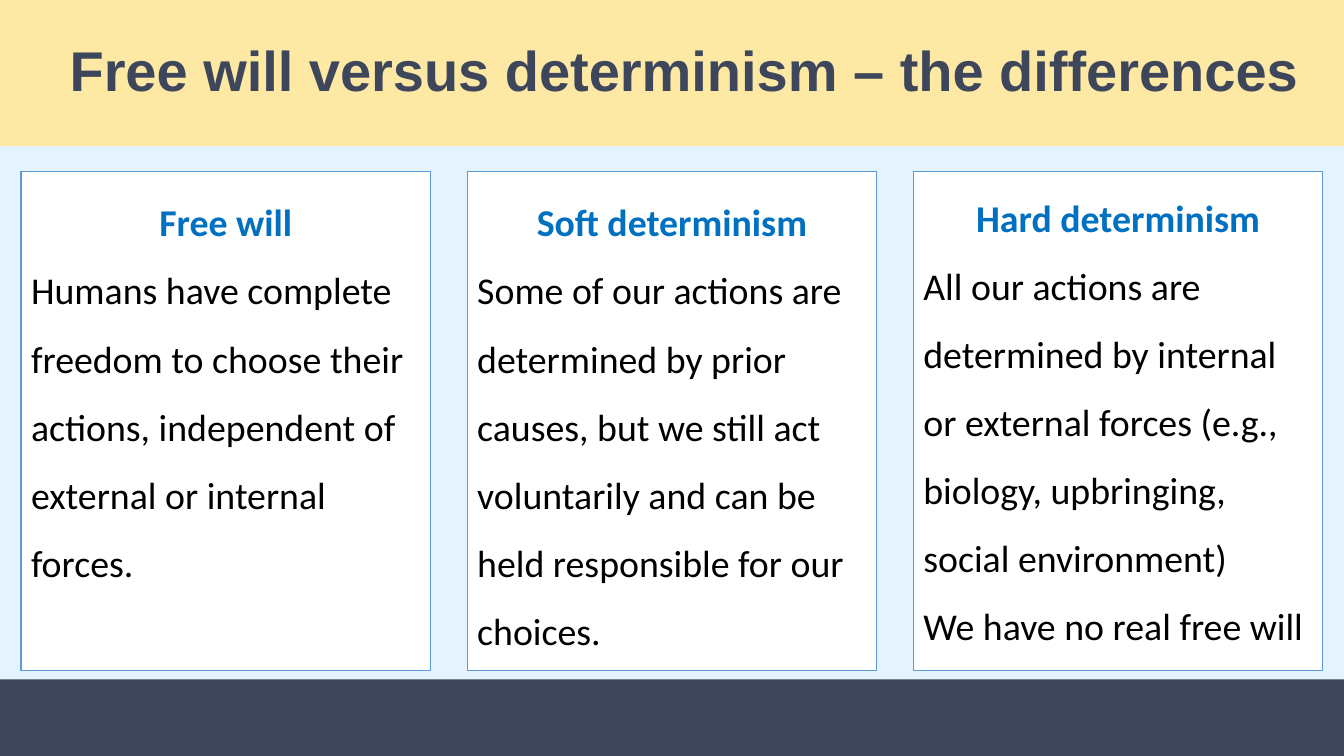
"""Build a slide comparing free will, soft determinism and hard determinism."""
from pptx import Presentation
from pptx.dml.color import RGBColor
from pptx.enum import shapes, text
from pptx.util import Inches, Pt

TITLE = "Free will versus determinism – the differences"
CARDS = [
    ("Free will", 1.5, [
        "Humans have complete freedom to choose their actions, "
        "independent of external or internal forces."]),
    ("Soft determinism", 1.5, [
        "Some of our actions are determined by prior causes, but we still act "
        "voluntarily and can be held responsible for our choices."]),
    ("Hard determinism", 1.4, [
        "All our actions are determined by internal or external forces "
        "(e.g., biology, upbringing, social environment)",
        "We have no real free will"]),
]
NAVY, CREAM, SKY, WHITE = "3D465A", "FEE9A4", "E5F3FF", "FFFFFF"
BORDER, HEADING, BLACK = "5B9BD5", "0070C0", "000000"
WIDTH, HEIGHT = 13.33, 7.5
CARD_LEFT, CARD_TOP, CARD_WIDTH, CARD_HEIGHT = 0.21, 1.7, 4.06, 4.95
CARD_STEP = (WIDTH - 2 * CARD_LEFT - CARD_WIDTH) / (len(CARDS) - 1)


def paint(fmt, color):
    fmt.solid()
    fmt.fore_color.rgb = RGBColor.from_string(color)


def add_box(s, left, top, width, height, color, border=None):
    sp = s.shapes.add_shape(shapes.MSO_SHAPE.RECTANGLE, Inches(left),
                            Inches(top), Inches(width), Inches(height))
    sp.shadow.inherit = False
    paint(sp.fill, color)
    if border:
        paint(sp.line.fill, border)
        sp.line.width = Pt(1)
    else:
        sp.line.fill.background()
    return sp


def style(p, align, spacing, font, size, color, bold):
    p.alignment = align
    p.line_spacing = spacing
    p.font.name = font
    p.font.size = Pt(size)
    p.font.bold = bold
    paint(p.font.fill, color)


def add_title(s):
    sp = s.shapes.title
    sp.left, sp.top = Inches(0), Inches(0)
    sp.width, sp.height = Inches(WIDTH), Inches(1.45)
    paint(sp.fill, CREAM)
    tf = sp.text_frame
    tf.text = TITLE
    tf.margin_left = Inches(0.69)
    tf.vertical_anchor = text.MSO_ANCHOR.MIDDLE
    style(tf.paragraphs[0], text.PP_ALIGN.LEFT, 0.9, "Arial", 40, NAVY, True)


def add_card(s, left, heading, spacing, body):
    sp = add_box(s, left, CARD_TOP, CARD_WIDTH, CARD_HEIGHT, WHITE, BORDER)
    tf = sp.text_frame
    tf.word_wrap = True
    tf.vertical_anchor = text.MSO_ANCHOR.TOP
    tf.text = "\n".join([heading, *body])
    first, *rest = tf.paragraphs
    style(first, text.PP_ALIGN.CENTER, spacing, "Calibri", 27, HEADING, True)
    for p in rest:
        style(p, text.PP_ALIGN.LEFT, 1.5, "Calibri", 27, BLACK, False)


def main():
    prs = Presentation()
    prs.slide_width, prs.slide_height = Inches(WIDTH), Inches(HEIGHT)
    s = prs.slides.add_slide(prs.slide_layouts[5])
    paint(s.background.fill, SKY)
    add_box(s, 0, 6.74, WIDTH, HEIGHT - 6.74, NAVY)
    add_title(s)
    for i, card in enumerate(CARDS):
        add_card(s, CARD_LEFT + i * CARD_STEP, *card)
    prs.save("out.pptx")


if __name__ == "__main__":
    main()
